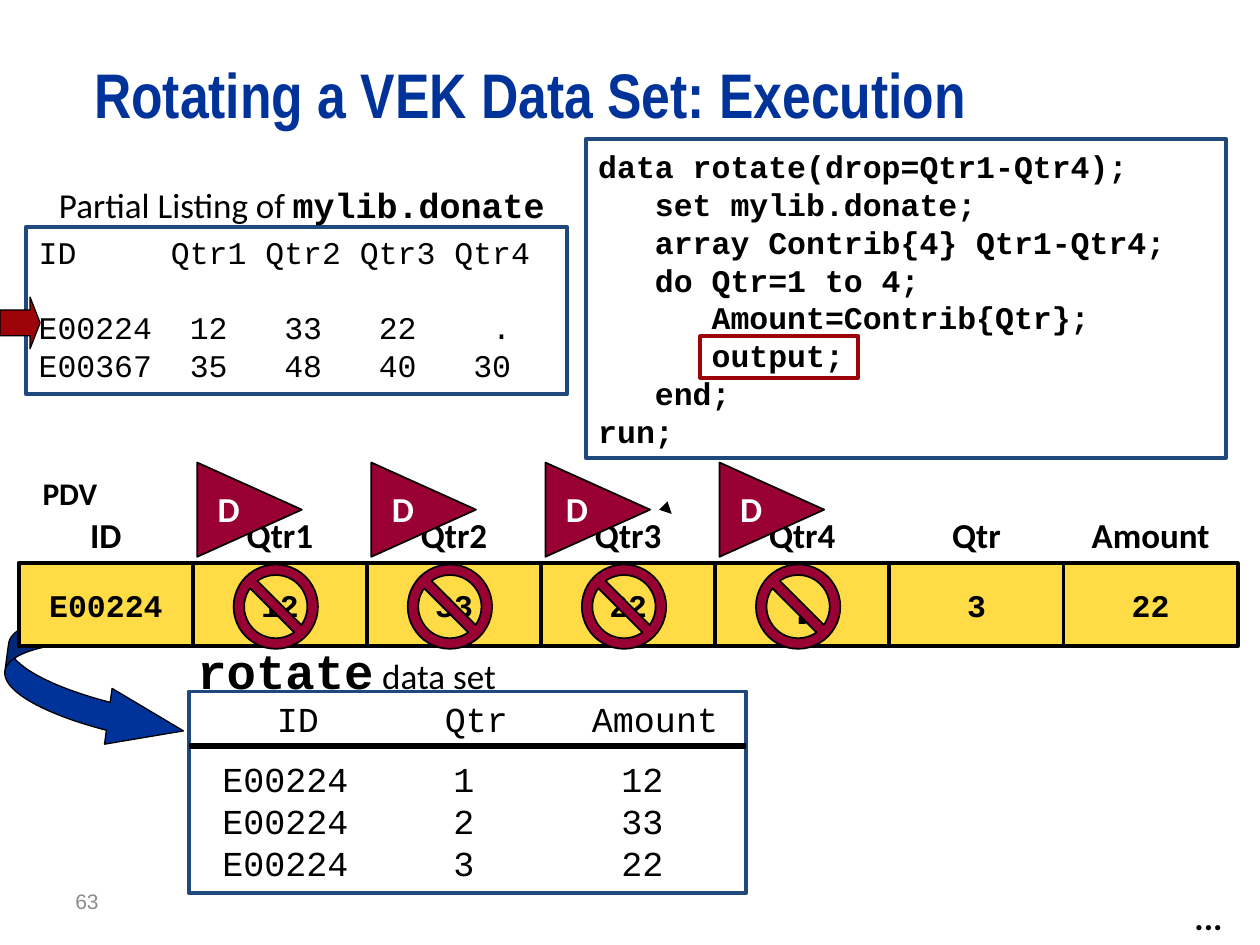
from lxml import etree
from pptx import Presentation
from pptx.dml.color import RGBColor
from pptx.enum.shapes import MSO_CONNECTOR, MSO_SHAPE
from pptx.enum.text import MSO_ANCHOR, PP_ALIGN
from pptx.oxml.ns import qn
from pptx.util import Cm, Pt

LEFT, CENTER = PP_ALIGN.LEFT, PP_ALIGN.CENTER
TOP, MIDDLE = MSO_ANCHOR.TOP, MSO_ANCHOR.MIDDLE
RECT, PROCESS = MSO_SHAPE.RECTANGLE, MSO_SHAPE.FLOWCHART_PROCESS

BLACK = RGBColor(0x00, 0x00, 0x00)
WHITE = RGBColor(0xFF, 0xFF, 0xFF)
GREY = RGBColor(0x8C, 0x8C, 0x8C)
BLUE = RGBColor(0x00, 0x33, 0x99)
FRAME_BLUE = RGBColor(0x1F, 0x49, 0x7D)
RED = RGBColor(0x9C, 0x04, 0x09)
MAROON = RGBColor(0x99, 0x00, 0x33)
YELLOW = RGBColor(0xFF, 0xDC, 0x45)

# Content
TITLE = "Rotating a VEK Data Set: Execution"
CODE = [  # indent level, statement
    (0, "data rotate(drop=Qtr1-Qtr4);"),
    (1, "set mylib.donate;"),
    (1, "array Contrib{4} Qtr1-Qtr4;"),
    (1, "do Qtr=1 to 4;"),
    (2, "Amount=Contrib{Qtr};"),
    (2, "output;"),
    (1, "end;"),
    (0, "run;"),
]
DONATE = [  # character column, value
    [(0, "ID"), (7, "Qtr1"), (12, "Qtr2"), (17, "Qtr3"), (22, "Qtr4")],
    [(0, "E00224"), (8, "12"), (13, "33"), (18, "22"), (24, ".")],
    [(0, "E00367"), (8, "35"), (13, "48"), (18, "40"), (23, "30")],
]
ROTATE = [
    [(3.6, "ID"), (11.6, "Qtr"), (18.6, "Amount")],
    [(1, "E00224"), (12, "1"), (20, "12")],
    [(1, "E00224"), (12, "2"), (20, "33")],
    [(1, "E00224"), (12, "3"), (20, "22")],
]
PDV = [  # variable, value, dropped from the output
    ("ID", "E00224", False),
    ("Qtr1", "12", True),
    ("Qtr2", "33", True),
    ("Qtr3", "22", True),
    ("Qtr4", ".", True),
    ("Qtr", "3", False),
    ("Amount", "22", False),
]


def font_format(name, size, bold=False):
    return {"name": name, "size": Pt(size), "bold": bold}


CODE_FONT = font_format("Courier New", 18, True)
LIST_FONT = font_format("Courier New", 18)
RESULT_FONT = font_format("Courier New", 20)
LABEL_FONT = font_format("Calibri", 20, True)
TEXT_FONT = font_format("Calibri", 20)
CHAR_WIDTH = 0.6  # Courier advance, in ems

prs = Presentation()
prs.slide_width, prs.slide_height = Cm(25.4), Cm(19.05)
slide = prs.slides.add_slide(prs.slide_layouts[5])


def add_run(paragraph, text, font, color=BLACK):
    run = paragraph.add_run()
    run.text = text
    for key, value in font.items():
        setattr(run.font, key, value)
    run.font.color.rgb = color


def set_frame(frame, anchor=TOP, wrap=True):
    for key, value in {"word_wrap": wrap, "vertical_anchor": anchor}.items():
        setattr(frame, key, value)


def add_paragraph(frame, number):
    paragraph = frame.add_paragraph() if number else frame.paragraphs[0]
    paragraph.alignment = LEFT
    return paragraph


def add_label(box, runs, color=BLACK, anchor=TOP, align=LEFT, wrap=True):
    label = slide.shapes.add_textbox(*map(Cm, box))
    set_frame(label.text_frame, anchor, wrap)
    paragraph = label.text_frame.paragraphs[0]
    paragraph.alignment = align
    for text, font in runs:
        add_run(paragraph, text, font, color)


def add_box(kind, box, fill, line, width, adjustments=()):
    shape = slide.shapes.add_shape(kind, *map(Cm, box))
    shape.shadow.inherit = False
    if fill is None:
        shape.fill.background()
    else:
        shape.fill.solid()
        shape.fill.fore_color.rgb = fill
    shape.line.color.rgb = line
    shape.line.width = Pt(width)
    for number, value in enumerate(adjustments):
        shape.adjustments[number] = value
    return shape


def add_listing(box, rows, font, gap):
    """Framed listing with tabbed columns and a gap under its header."""
    frame = add_box(RECT, box, WHITE, FRAME_BLUE, 2.25).text_frame
    set_frame(frame)
    for number, row in enumerate(rows):
        paragraph = add_paragraph(frame, number)
        if number == 1:
            paragraph.space_before = Pt(gap)
        tabs = etree.SubElement(paragraph._p.get_or_add_pPr(), qn("a:tabLst"))
        for column, _ in row:
            if column:
                stop = int(column * CHAR_WIDTH * font["size"])
                etree.SubElement(tabs, qn("a:tab"), pos=str(stop), algn="l")
        text = "\t".join(value for _, value in row)
        add_run(paragraph, text if row[0][0] == 0 else "\t" + text, font)


def add_line(start, end, width, arrow=False):
    line = slide.shapes.add_connector(MSO_CONNECTOR.STRAIGHT, *map(Cm, start + end))
    line.line.color.rgb = BLACK
    line.line.width = Pt(width)
    if arrow:
        etree.SubElement(line.line._get_or_add_ln(), qn("a:tailEnd"), type="triangle")
    etree.SubElement(line._element.spPr, qn("a:effectLst"))


# Title
title = slide.shapes.title
for side, value in zip(("left", "top", "width", "height"), (1.9, 1.27, 23.5, 1.9)):
    setattr(title, side, Cm(value))
set_frame(title.text_frame)
for margin in ("margin_left", "margin_top", "margin_right", "margin_bottom"):
    setattr(title.text_frame, margin, 0)
heading = add_paragraph(title.text_frame, 0)
heading.line_spacing = Pt(39)
add_run(heading, TITLE, font_format("Arial Narrow", 36, True), BLUE)

# Page number and continuation mark
add_label((1.27, 17.65, 5.92, 1.02), [("63", font_format("Arial", 12))], GREY, MIDDLE)
add_label((23.83, 17.93, 1.27, 1.09), [("...", LABEL_FONT)])

# Program, with the current statement framed
code = add_box(PROCESS, (11.81, 2.8, 12.9, 6.43), WHITE, FRAME_BLUE, 2.25).text_frame
set_frame(code, MIDDLE)
for number, (level, statement) in enumerate(CODE):
    paragraph = add_paragraph(code, number)
    indent = int(3 * level * CHAR_WIDTH * CODE_FONT["size"])
    paragraph._p.get_or_add_pPr().set("marL", str(indent))
    add_run(paragraph, statement, CODE_FONT)

# Input listing, with the current row marked
add_listing((0.53, 4.57, 10.9, 3.38), DONATE, LIST_FONT, 21.6)
add_label((0.94, 3.58, 10.8, 1.09), [
    ("Partial Listing of", TEXT_FONT),
    (" ", font_format("Calibri", 18)),
    ("mylib.donate", font_format("Courier New", 20, True)),
])
add_box(MSO_SHAPE.RIGHT_ARROW, (0, 5.99, 0.81, 1.04), RED, BLACK, 0.75, (0.5, 0.25))
add_line((13.53, 10.35), (13.54, 10.36), 2.25, arrow=True)
add_box(RECT, (14.12, 6.78, 3.18, 0.84), None, RED, 2.25)

# Arrow from the PDV to the output data set
flow = add_box(MSO_SHAPE.CURVED_LEFT_ARROW, (0.1, 12.22, 3.73, 2.84), BLUE, BLACK,
               0.75, (0.2, 0.4, 0.543))
flow.rotation = 187.7
flow._element.spPr.find(qn("a:xfrm")).set("flipV", "1")

# PDV cells and variable names
PDV_LEFT, PDV_TOP, CELL_W, CELL_H = 0.38, 11.35, 3.51, 1.68
lefts = [PDV_LEFT + CELL_W * number for number in range(len(PDV))]
for left, (variable, value, _) in zip(lefts, PDV):
    cell = add_box(PROCESS, (left, PDV_TOP, CELL_W, CELL_H), YELLOW, BLACK, 2.25)
    set_frame(cell.text_frame, MIDDLE, wrap=False)
    cell.text_frame.paragraphs[0].alignment = CENTER
    size = 28 if value == "." else 18
    add_run(cell.text_frame.paragraphs[0], value, font_format("Courier New", size, True))
    add_label((left, 10.24, CELL_W, 1.09), [(variable, LABEL_FONT)],
              anchor=MIDDLE, align=CENTER, wrap=False)

# Drop flags and prohibition signs
for left, (_, _, dropped) in zip(lefts, PDV):
    if dropped:
        flag = add_box(MSO_SHAPE.ISOSCELES_TRIANGLE, (left + 0.19, 9.22, 1.9, 2.11),
                       MAROON, BLACK, 1)
        flag.rotation = 90
        add_label((left + 0.25, 9.7, 0.89, 1.09), [("D", LABEL_FONT)], WHITE)
        add_box(MSO_SHAPE.NO_SYMBOL, (left + 0.82, 11.38, 1.7, 1.7), MAROON, BLACK,
                1, (0.125,))

# Output data set
add_listing((3.81, 13.94, 11.23, 4.06), ROTATE, RESULT_FONT, 10)
add_line((3.81, 15.04), (15.04, 15.04), 3)
add_label((0.28, 9.3, 2.26, 1.27), [("PDV", font_format("Calibri", 18, True))],
          anchor=MIDDLE, align=CENTER, wrap=False)
add_label((3.73, 12.78, 7.75, 1.45), [
    ("rotate", font_format("Courier New", 28, True)),
    (" ", font_format("Calibri", 22, True)),
    ("data set", TEXT_FONT),
])

prs.save("out.pptx")
